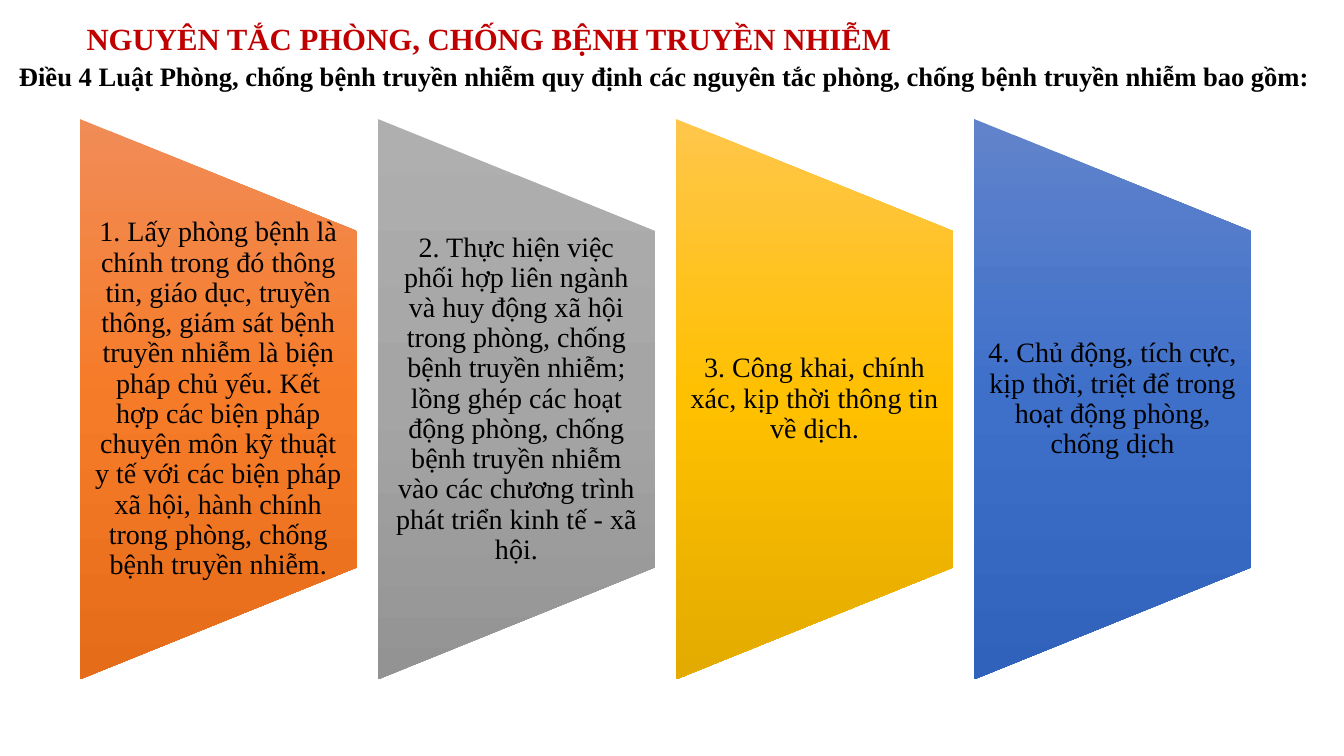
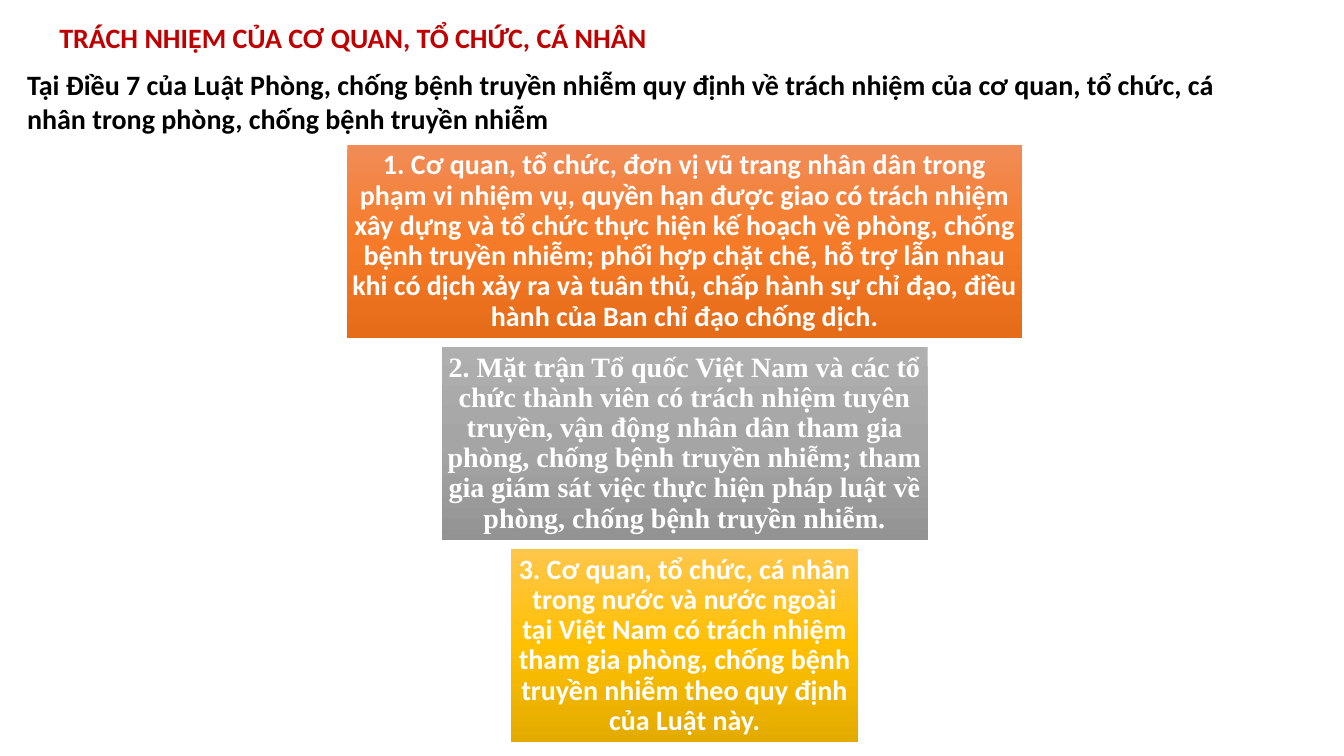
"""Builds two slides on the principles and duties of infectious disease control."""
from copy import deepcopy

from pptx import Presentation
from pptx.dml.color import RGBColor
from pptx.enum.shapes import MSO_SHAPE as Shape
from pptx.enum.text import MSO_ANCHOR as Anchor, PP_ALIGN as Align
from pptx.oxml.ns import qn
from pptx.util import Inches, Pt

SERIF, SANS = "Times New Roman", "Calibri"
RED, BLACK, WHITE = "C00000", "000000", "FFFFFF"
GRADIENTS = [
    ("F18C57", "F67B28", "E56C19"),
    ("AFAFAF", "A5A5A5", "939393"),
    ("FFC64B", "FFC000", "E3AB00"),
    ("6183CB", "3E70CA", "3062BB"),
]
TEXT_INSETS = (0.1, 0.05, 0.1, 0.05)
PRINCIPLE_INSETS = (0.14, 0, 0.14, 0)
DUTY_INSETS = (0.04, 0.06, 0.04, 0.06)

PRINCIPLE_HEADINGS = [
    ("NGUYÊN TẮC PHÒNG, CHỐNG BỆNH TRUYỀN NHIỄM", (0.76, 0.15, 9.29, 0.47), 22, RED),
    ("Điều 4 Luật Phòng, chống bệnh truyền nhiễm quy định các nguyên tắc phòng, chống "
     "bệnh truyền nhiễm bao gồm:", (0.09, 0.55, 13.17, 0.42), 19, BLACK),
]
PRINCIPLES = [
    "1. Lấy phòng bệnh là chính trong đó thông tin, giáo dục, truyền thông, giám sát bệnh "
    "truyền nhiễm là biện pháp chủ yếu. Kết hợp các biện pháp chuyên môn kỹ thuật y tế với "
    "các biện pháp xã hội, hành chính trong phòng, chống bệnh truyền nhiễm.",
    "2. Thực hiện việc phối hợp liên ngành và huy động xã hội trong phòng, chống bệnh truyền "
    "nhiễm; lồng ghép các hoạt động phòng, chống bệnh truyền nhiễm vào các chương trình phát "
    "triển kinh tế - xã hội.",
    "3. Công khai, chính xác, kịp thời thông tin về dịch.",
    "4. Chủ động, tích cực, kịp thời, triệt để trong hoạt động phòng, chống dịch",
]
DUTY_HEADINGS = [
    ("TRÁCH NHIỆM CỦA CƠ QUAN, TỔ CHỨC, CÁ NHÂN", (0.49, 0.15, 7.22, 0.44), 20, RED),
    ("Tại Điều 7 của Luật Phòng, chống bệnh truyền nhiễm quy định về trách nhiệm của cơ quan, "
     "tổ chức, cá nhân trong phòng, chống bệnh truyền nhiễm", (0.17, 0.62, 12.5, 0.77), 20, BLACK),
]
DUTIES = [
    ("1. Cơ quan, tổ chức, đơn vị vũ trang nhân dân trong phạm vi nhiệm vụ, quyền hạn được giao "
     "có trách nhiệm xây dựng và tổ chức thực hiện kế hoạch về phòng, chống bệnh truyền nhiễm; "
     "phối hợp chặt chẽ, hỗ trợ lẫn nhau khi có dịch xảy ra và tuân thủ, chấp hành sự chỉ đạo, "
     "điều hành của Ban chỉ đạo chống dịch.", 6.69, SANS),
    ("2. Mặt trận Tổ quốc Việt Nam và các tổ chức thành viên có trách nhiệm tuyên truyền, vận "
     "động nhân dân tham gia phòng, chống bệnh truyền nhiễm; tham gia giám sát việc thực hiện "
     "pháp luật về phòng, chống bệnh truyền nhiễm.", 4.82, SERIF),
    ("3. Cơ quan, tổ chức, cá nhân trong nước và nước ngoài tại Việt Nam có trách nhiệm tham gia "
     "phòng, chống bệnh truyền nhiễm theo quy định của Luật này.", 3.44, SANS),
]


def color(value):
    return RGBColor.from_string(value)


def write(shape, text, size, font, fill, bold, insets=TEXT_INSETS, body=False):
    frame = shape.text_frame
    frame.word_wrap = True
    (frame.margin_left, frame.margin_top,
     frame.margin_right, frame.margin_bottom) = map(Inches, insets)
    frame.vertical_anchor = Anchor.MIDDLE if body else Anchor.TOP
    paragraph = frame.paragraphs[0]
    paragraph.alignment = Align.CENTER if body else Align.LEFT
    if body:
        paragraph.line_spacing = 0.9
    run = paragraph.add_run()
    run.text = text
    run.font.size, run.font.name, run.font.bold = Pt(size), font, bold
    run.font.color.rgb = color(fill)


def add_headings(slide, headings, font):
    for text, box, size, fill in headings:
        write(slide.shapes.add_textbox(*map(Inches, box)), text, size, font, fill, True)


def add_panel(slide, kind, box, colors):
    shape = slide.shapes.add_shape(kind, *map(Inches, box))
    shape.shadow.inherit = False
    shape.line.fill.background()
    shape.fill.gradient()
    shape.fill.gradient_angle = 270
    gradient = shape._element.spPr.find(qn("a:gradFill"))
    gradient.set("rotWithShape", "0")
    stops = gradient.find(qn("a:gsLst"))
    stops.append(deepcopy(stops[-1]))
    for stop, value, position in zip(shape.fill.gradient_stops, colors, (0, 0.5, 1)):
        stop.color.rgb = color(value)
        stop.position = position
    return shape


def add_principles(slide):
    left, right, middle = 0.79, 12.41, 3.96
    width, length, text_height = 2.75, 5.56, 3.33
    pitch = (right - left - width) / (len(PRINCIPLES) - 1)
    for index, (text, colors) in enumerate(zip(PRINCIPLES, GRADIENTS)):
        column = left + index * pitch
        box = (column + (width - length) / 2, middle - width / 2, length, width)
        add_panel(slide, Shape.FLOWCHART_MANUAL_OPERATION, box, colors).rotation = 270
        text_box = (column, middle - text_height / 2, width, text_height)
        write(slide.shapes.add_textbox(*map(Inches, text_box)), text, 20, SERIF, BLACK,
              False, PRINCIPLE_INSETS, True)


def add_duties(slide):
    top, bottom, center, height = 1.44, 7.36, 6.79, 1.91
    pitch = (bottom - top - height) / (len(DUTIES) - 1)
    for index, ((text, width, font), colors) in enumerate(zip(DUTIES, GRADIENTS)):
        box = (center - width / 2, top + index * pitch, width, height)
        panel = add_panel(slide, Shape.RECTANGLE, box, colors)
        write(panel, text, 20, font, WHITE, True, DUTY_INSETS, True)


def main():
    presentation = Presentation()
    presentation.slide_width, presentation.slide_height = Inches(13.33), Inches(7.5)
    for headings, font, add_body in [
        (PRINCIPLE_HEADINGS, SERIF, add_principles),
        (DUTY_HEADINGS, SANS, add_duties),
    ]:
        slide = presentation.slides.add_slide(presentation.slide_layouts[6])
        add_headings(slide, headings, font)
        add_body(slide)
    presentation.save("out.pptx")


if __name__ == "__main__":
    main()
